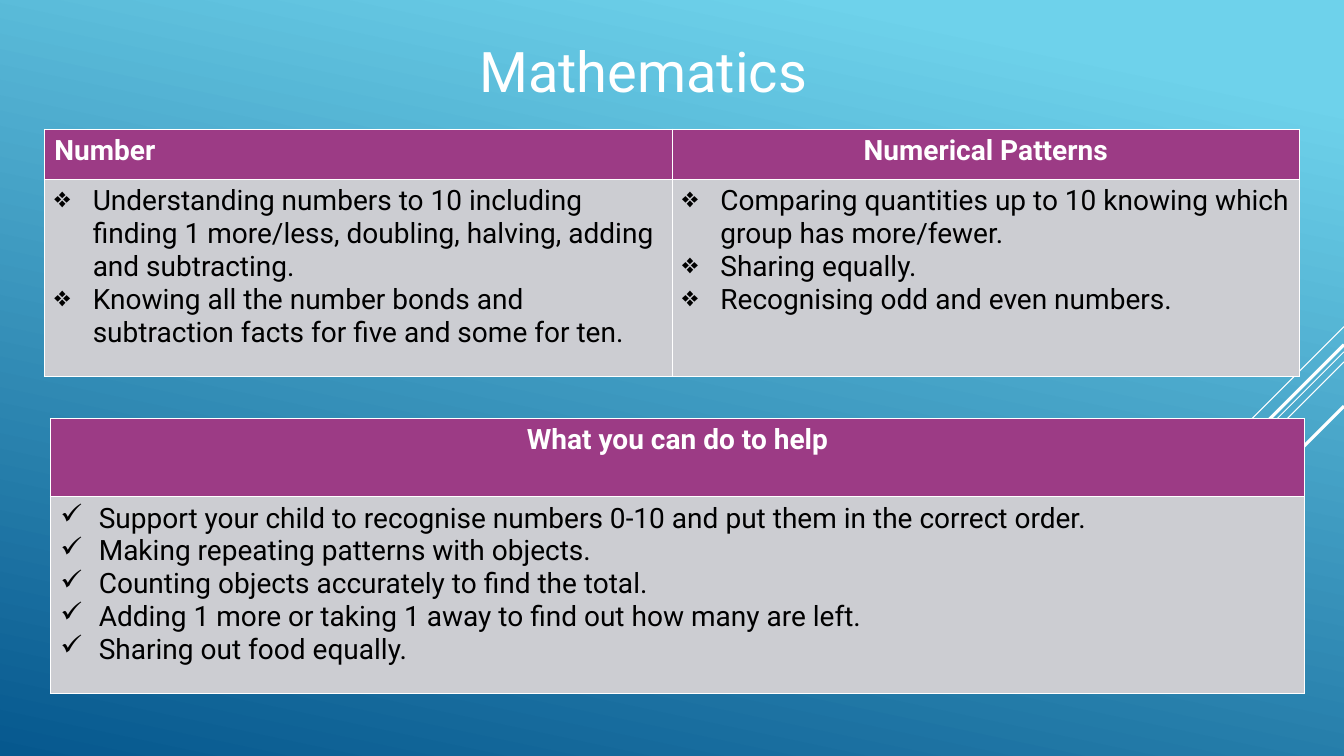
from dataclasses import dataclass

from lxml import etree
from pptx import Presentation
from pptx.dml.color import RGBColor
from pptx.enum.shapes import MSO_CONNECTOR
from pptx.enum.text import MSO_ANCHOR, MSO_AUTO_SIZE, PP_ALIGN
from pptx.oxml.ns import qn
from pptx.util import Inches, Pt

STRAIGHT = MSO_CONNECTOR.STRAIGHT
MIDDLE = MSO_ANCHOR.MIDDLE
NO_FIT = MSO_AUTO_SIZE.NONE
LEFT, CENTER = PP_ALIGN.LEFT, PP_ALIGN.CENTER


@dataclass(frozen=True)
class Theme:
    font: str = "Roboto"
    title_size: int = 40
    body_size: int = 20
    white: str = "FFFFFF"
    black: str = "000000"
    header: str = "9C3B85"
    body: str = "CCCDD2"
    sky: str = "6ED2EB"
    deep: str = "06588E"
    thin: float = 0.75
    thick: float = 2.25


THEME = Theme()
SLIDE_W, SLIDE_H = 13.33, 7.5
INDENT = 0.38

# Diagonal rays: height at the right edge, horizontal run, width
RAYS = [
    (3.24, 1.0, THEME.thin),
    (3.49, 3.26, THEME.thin),
    (3.59, 2.07, THEME.thin),
    (3.42, 1.91, THEME.thick),
    (4.03, 1.39, THEME.thick),
]

# Columns: heading, heading alignment, list items
HELP = [
    ("What you can do to help", CENTER, [
        "Support your child to recognise numbers 0-10 and put them in the correct order.",
        "Making repeating patterns with objects.",
        "Counting objects accurately to find the total.",
        "Adding 1 more or taking 1 away to find out how many are left.",
        "Sharing out food equally.",
    ]),
]
GOALS = [
    ("Number", LEFT, [
        "Understanding numbers to 10 including finding 1 more/less, doubling, "
        "halving, adding and subtracting.",
        "Knowing all the number bonds and subtraction facts for five and some for ten.",
    ]),
    ("Numerical Patterns", CENTER, [
        "Comparing quantities up to 10 knowing which group has more/fewer.",
        "Sharing equally.",
        "Recognising odd and even numbers.",
    ]),
]


def rgb(color):
    return RGBColor.from_string(color)


def style_text(p, size, color, bold=False):
    for r in p.runs:
        r.font.name = THEME.font
        r.font.size = Pt(size)
        r.font.bold = bold
        r.font.color.rgb = rgb(color)


def add_bullet(p, mark):
    pPr = p._p.get_or_add_pPr()
    pPr.set("marL", str(Inches(INDENT)))
    pPr.set("indent", str(-Inches(INDENT)))
    etree.SubElement(pPr, qn("a:buChar")).set("char", mark)


def style_cell(cell, fill):
    cell.fill.solid()
    cell.fill.fore_color.rgb = rgb(fill)
    # Borders come before the fill in the cell properties
    tcPr = cell._tc.get_or_add_tcPr()
    for i, side in enumerate(("a:lnL", "a:lnR", "a:lnT", "a:lnB")):
        ln = etree.Element(qn(side), w=str(Pt(THEME.thin)))
        solid = etree.SubElement(ln, qn("a:solidFill"))
        etree.SubElement(solid, qn("a:srgbClr")).set("val", THEME.white)
        tcPr.insert(i, ln)


def paint_background(slide):
    fill = slide.background.fill
    fill.gradient()
    fill.gradient_angle = 360 - 102
    stops = ((0.1, THEME.sky), (1.0, THEME.deep))
    for stop, (position, color) in zip(fill.gradient_stops, stops):
        stop.position = position
        stop.color.rgb = rgb(color)


def add_rays(slide, right):
    for top, run, width in RAYS:
        ray = slide.shapes.add_connector(
            STRAIGHT, Inches(right), Inches(top), Inches(right - run), Inches(top + run))
        ray.line.color.rgb = rgb(THEME.white)
        ray.line.width = Pt(width)
        etree.SubElement(ray._element.spPr, qn("a:effectLst"))


def add_title(slide, text, left, top, width, height):
    sp = slide.shapes.title
    sp.left, sp.top = Inches(left), Inches(top)
    sp.width, sp.height = Inches(width), Inches(height)
    tf = sp.text_frame
    tf.text = text
    tf.auto_size = NO_FIT
    tf.vertical_anchor = MIDDLE
    p = tf.paragraphs[0]
    p.alignment = CENTER
    style_text(p, THEME.title_size, THEME.white)


def add_list_table(slide, columns, mark, left, top, width, row_heights):
    table = slide.shapes.add_table(
        2, len(columns), Inches(left), Inches(top),
        Inches(width), Inches(sum(row_heights))).table
    for row, height in zip(table.rows, row_heights):
        row.height = Inches(height)

    for i, (heading, alignment, items) in enumerate(columns):
        table.columns[i].width = Inches(width / len(columns))

        # Heading
        cell = table.cell(0, i)
        style_cell(cell, THEME.header)
        cell.text_frame.text = heading
        p = cell.text_frame.paragraphs[0]
        p.alignment = alignment
        style_text(p, THEME.body_size, THEME.white, bold=True)

        # Bulleted list
        cell = table.cell(1, i)
        style_cell(cell, THEME.body)
        cell.text_frame.text = "\n".join(items)
        for p in cell.text_frame.paragraphs:
            add_bullet(p, mark)
            style_text(p, THEME.body_size, THEME.black)


def main():
    prs = Presentation()
    prs.slide_width, prs.slide_height = Inches(SLIDE_W), Inches(SLIDE_H)
    slide = prs.slides.add_slide(prs.slide_layouts.get_by_name("Title Only"))
    paint_background(slide)
    add_rays(slide, SLIDE_W)
    add_title(slide, "Mathematics", 0.88, 0.37, 11, 0.65)
    add_list_table(slide, HELP, "✓", 0.5, 4.15, 12.44, (0.78, 1.95))
    add_list_table(slide, GOALS, "❖", 0.44, 1.28, 12.45, (0.5, 1.95))
    prs.save("out.pptx")


if __name__ == "__main__":
    main()
